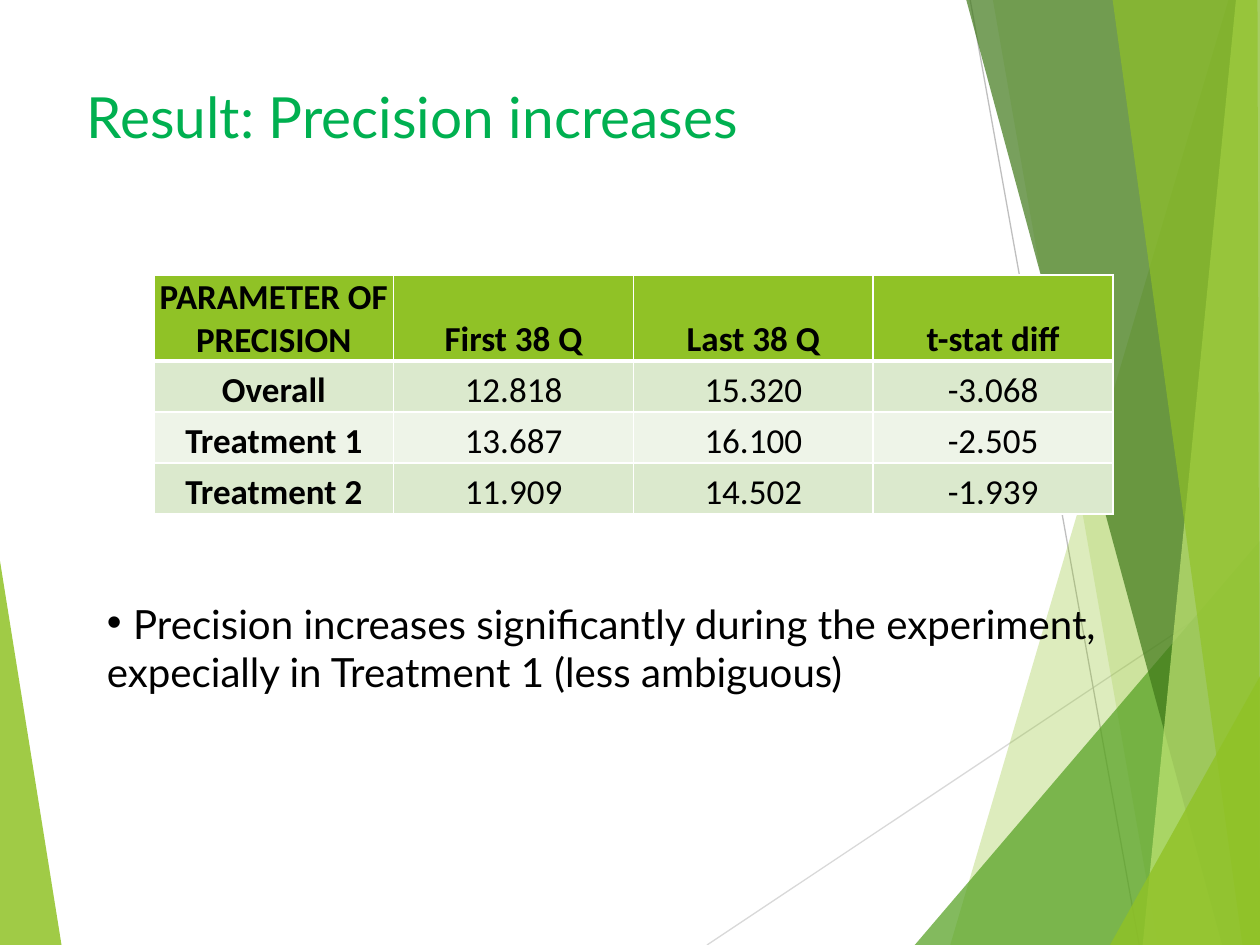
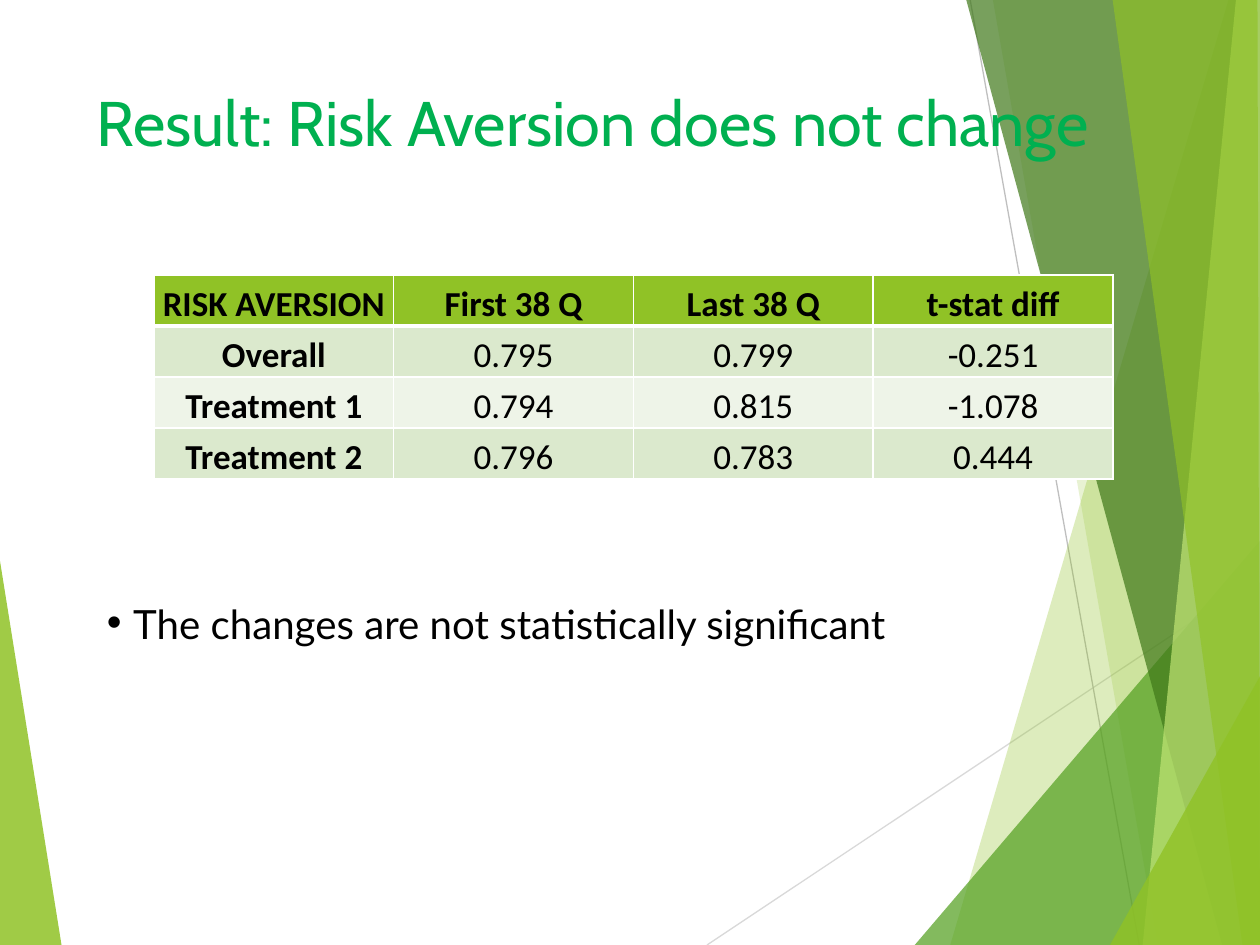
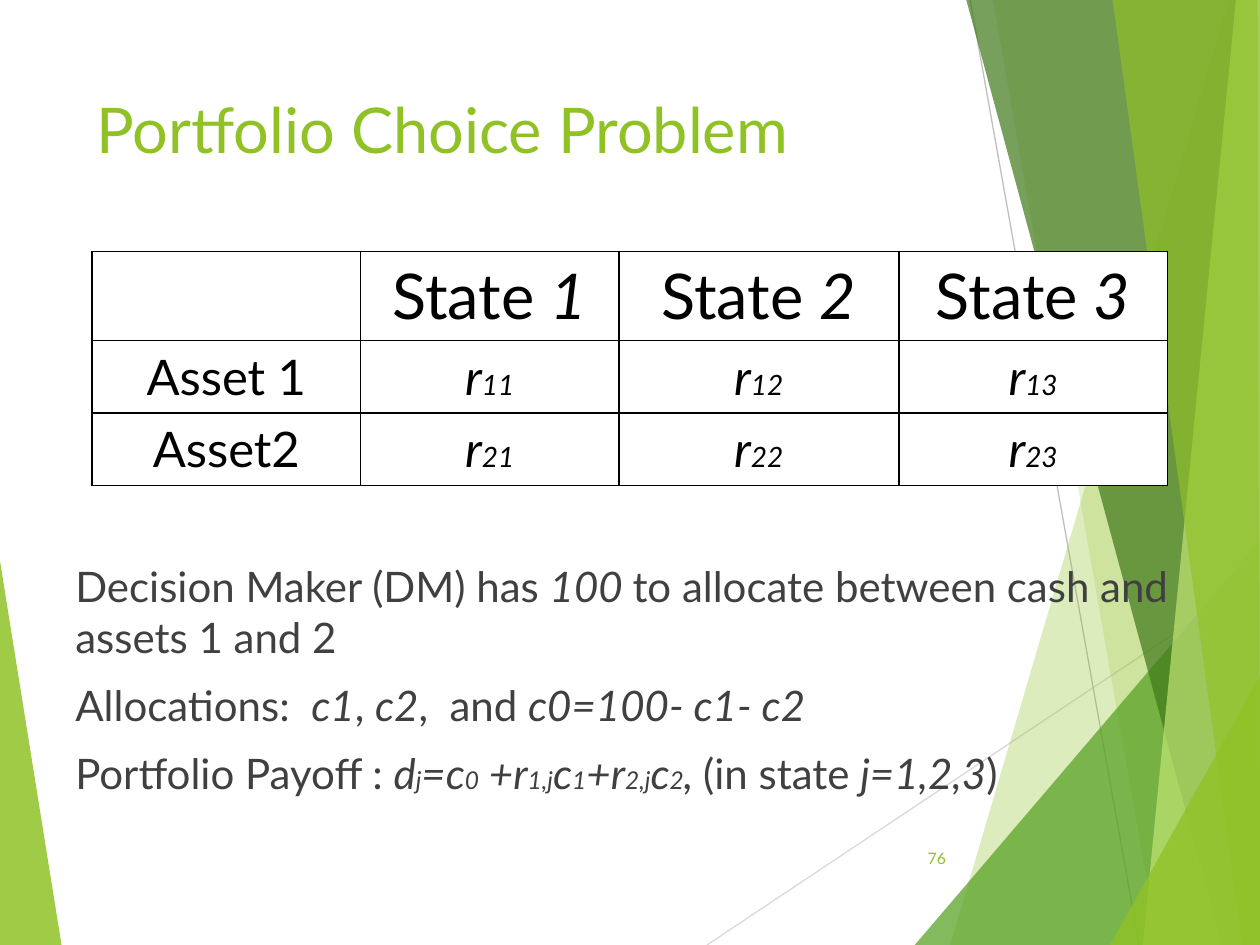
from lxml import etree
from pptx import Presentation
from pptx.dml.color import RGBColor
from pptx.enum import shapes, text
from pptx.oxml import ns
from pptx.util import Pt

# Shared colours and fonts
WHITE = RGBColor(0xFF, 0xFF, 0xFF)
BLACK = RGBColor(0, 0, 0)
BODY = RGBColor(0x40, 0x40, 0x40)
EMERALD = RGBColor(0x00, 0xB0, 0x50)
LIME = RGBColor(0x90, 0xC2, 0x26)
LEAF = RGBColor(0x54, 0xA0, 0x21)
FOREST = RGBColor(0x3F, 0x78, 0x19)
PALE_LIME = RGBColor(0xC0, 0xE4, 0x74)
BAND_DARK = RGBColor(0xDB, 0xE9, 0xCD)
BAND_LIGHT = RGBColor(0xEE, 0xF4, 0xE8)
GREY = RGBColor(0xBF, 0xBF, 0xBF)
LIGHT_GREY = RGBColor(0xD9, 0xD9, 0xD9)
FONT = "Lato"
WIDTH, HEIGHT = 720, 540

# Facets of the backdrop: colour, opacity in percent, corners
LEFT_FACET = (LIME, 85, [(-0.7, 316), (35.3, 540.7), (-0.7, 540)])
RIGHT_FACETS = [
    (LIME, 30, [(702, 0), (543, 540), (721, 540), (721, 0)]),
    (LIME, 20, [(567.4, 0), (661.7, 540), (720.7, 540), (720.7, 0)]),
    (LEAF, 72, [(522.7, 540), (720, 309), (720.7, 540)]),
    (FOREST, 70, [(552.2, 0), (698.4, 540), (720.7, 540), (720.7, 0)]),
    (PALE_LIME, 70, [(706.3, 0), (653, 540), (720.7, 540), (720, 0)]),
    (LIME, 65, [(635.8, 0), (710, 540), (720, 540), (718.6, 0)]),
    (LIME, 80, [(634.3, 540), (720.7, 385.2), (720.7, 540)]),
]
RAYS = [(LIGHT_GREY, (404, 540), (720.7, 329)),
        (GREY, (554.4, 0), (651, 540))]

ITALIC = dict(italic=True)
SUB = dict(italic=True, size=14)


def sub_element(parent, tag, **attrs):
    return etree.SubElement(parent, ns.qn(tag), **attrs)


def add_run(p, content, size=24, font=FONT, color=BLACK, bold=False, italic=False):
    r = p.add_run()
    r.text = content
    f = r.font
    f.size, f.name, f.bold, f.italic = Pt(size), font, bold, italic
    f.color.rgb = color


def add_parts(p, parts, **base):
    """Fill a paragraph from strings and (string, format) pairs."""
    for part in [parts] if isinstance(parts, str) else parts:
        content, extra = (part, {}) if isinstance(part, str) else part
        add_run(p, content, **{**base, **extra})


def add_text(s, box, paragraphs, anchor=text.MSO_ANCHOR.TOP, align=None,
             space=0, bullet=False, **fmt):
    tf = s.shapes.add_textbox(*map(Pt, box)).text_frame
    tf.word_wrap = True
    tf.vertical_anchor = anchor
    for i, parts in enumerate(paragraphs):
        p = tf.paragraphs[0] if i == 0 else tf.add_paragraph()
        p.alignment = align
        p.space_before = Pt(space if i else 0)
        if bullet:
            pPr = p._p.get_or_add_pPr()
            sub_element(pPr, "a:buFont", typeface="Arial")
            sub_element(pPr, "a:buChar", char="•")
        add_parts(p, parts, **fmt)


# Backdrop
def add_facet(s, color, opacity, corners):
    points = [(Pt(x), Pt(y)) for x, y in corners]
    builder = s.shapes.build_freeform(*points[0], scale=1.0)
    builder.add_line_segments(points[1:], close=True)
    sp = builder.convert_to_shape()
    sp.shadow.inherit = False
    sp.line.fill.background()
    sp.fill.solid()
    sp.fill.fore_color.rgb = color
    clr = sp._element.spPr.find(".//" + ns.qn("a:srgbClr"))
    sub_element(clr, "a:alpha", val=str(opacity * 1000))


def add_ray(s, color, start, end):
    line = s.shapes.add_connector(shapes.MSO_CONNECTOR.STRAIGHT,
                                  *map(Pt, start + end))
    line.line.color.rgb = color
    line.line.width = Pt(0.75)
    sub_element(line._element.spPr, "a:effectLst")


def add_slide(prs):
    s = prs.slides.add_slide(prs.slide_layouts[6])
    add_facet(s, *LEFT_FACET)
    for ray in RAYS:
        add_ray(s, *ray)
    for facet in RIGHT_FACETS:
        add_facet(s, *facet)
    return s


# Tables
def style_cell(cell, fill, border, bottom=1):
    tcPr = cell._tc.get_or_add_tcPr()
    for side in "LRTB":
        width = Pt(bottom if side == "B" else 1)
        ln = sub_element(tcPr, "a:ln" + side, w=str(width))
        sub_element(sub_element(ln, "a:solidFill"), "a:srgbClr", val=str(border))
    cell.fill.solid()
    cell.fill.fore_color.rgb = fill


def add_table(s, left, top, widths, heights):
    box = (left, top, sum(widths), sum(heights))
    table = s.shapes.add_table(len(heights), len(widths), *map(Pt, box)).table
    for column, width in zip(table.columns, widths):
        column.width = Pt(width)
    for row, height in zip(table.rows, heights):
        row.height = Pt(height)
    return table


def add_result_table(s, heading, results, header_height):
    rows = [(heading, "First 38 Q", "Last 38 Q", "t-stat diff")] + results
    heights = [header_height] + [29.2] * len(results)
    table = add_table(s, 88, 157, [137] * 4, heights)
    for i, row in enumerate(rows):
        fill = LIME if i == 0 else BAND_DARK if i % 2 else BAND_LIGHT
        for j, value in enumerate(row):
            cell = table.cell(i, j)
            style_cell(cell, fill, WHITE, bottom=1 if i else 3)
            cell.margin_left = cell.margin_right = cell.margin_top = Pt(0.7)
            cell.margin_bottom = 0
            cell.vertical_anchor = text.MSO_ANCHOR.BOTTOM
            p = cell.text_frame.paragraphs[0]
            p.alignment = text.PP_ALIGN.CENTER
            add_run(p, value, size=20, font="Calibri", bold=i == 0 or j == 0)


def add_payoff_table(s):
    rows = [[""] + [["State ", (str(n), ITALIC)] for n in (1, 2, 3)]]
    for n, asset in enumerate(("Asset 1", "Asset2"), 1):
        returns = [[("r", ITALIC), (f"{n}{state}", dict(italic=True, size=16))]
                   for state in (1, 2, 3)]
        rows.append([asset] + returns)
    table = add_table(s, 52.6, 143.6, [153.5, 147.5, 160, 153.5], [51, 41.4, 41.4])
    for i, row in enumerate(rows):
        for j, parts in enumerate(row):
            cell = table.cell(i, j)
            style_cell(cell, WHITE, BLACK)
            p = cell.text_frame.paragraphs[0]
            p.alignment = text.PP_ALIGN.CENTER
            if parts:
                add_parts(p, parts, size=28 if i else 36)


def add_finding(s, finding):
    parts = [(" ", dict(size=24, font="Arial")), finding]
    add_text(s, (54, 337.7, 618, 65), [parts], bullet=True, size=23)


# Slides
def precision_slide(prs):
    s = add_slide(prs)
    add_text(s, (42.5, 43.2, 647, 50), ["Result: Precision increases"],
             size=32.4, color=EMERALD)
    add_result_table(s, "PARAMETER OF PRECISION", [
        ("Overall", "12.818", "15.320", "-3.068"),
        ("Treatment 1", "13.687", "16.100", "-2.505"),
        ("Treatment 2", "11.909", "14.502", "-1.939")], header_height=49.2)
    add_finding(s, "Precision increases significantly during the experiment, "
                   "expecially in Treatment 1 (less ambiguous)")


def risk_aversion_slide(prs):
    s = add_slide(prs)
    add_text(s, (48.2, 44.6, 652, 50), ["Result: Risk Aversion does not change"],
             anchor=text.MSO_ANCHOR.MIDDLE, size=36, font="Cabin", color=EMERALD)
    add_result_table(s, "RISK AVERSION", [
        ("Overall", "0.795", "0.799", "-0.251"),
        ("Treatment 1", "0.794", "0.815", "-1.078"),
        ("Treatment 2", "0.796", "0.783", "0.444")], header_height=29.2)
    add_finding(s, "The changes are not statistically significant")


def portfolio_slide(prs):
    s = add_slide(prs)
    add_text(s, (48.2, 48.2, 500, 104), ["Portfolio Choice Problem"],
             size=36, color=LIME)
    payoff = ["Portfolio Payoff : "]
    for symbol, index in (("d", "j"), ("=c", "0"), (" +r", "1,j"), ("c", "1"),
                          ("+r", "2,j"), ("c", "2")):
        payoff += [(symbol, ITALIC), (index, SUB)]
    payoff += [(", ", ITALIC), "(in state ", ("j=1,2,3", ITALIC), ")"]
    add_text(s, (36, 317, 648, 150), [
        ["Decision Maker (DM) has ", ("100 ", ITALIC),
         "to allocate between cash and assets 1 and 2"],
        ["Allocations:  ", ("c1", ITALIC), ", ", ("c2", ITALIC), ",  and ",
         ("c0=100- c1- c2", ITALIC)],
        payoff], space=10, color=BODY)
    add_text(s, (507.6, 476, 40, 28.8), ["76"], anchor=text.MSO_ANCHOR.MIDDLE,
             align=text.PP_ALIGN.RIGHT, size=9, color=LIME)
    add_payoff_table(s)


def main():
    prs = Presentation()
    prs.slide_width, prs.slide_height = Pt(WIDTH), Pt(HEIGHT)
    precision_slide(prs)
    risk_aversion_slide(prs)
    portfolio_slide(prs)
    prs.save("out.pptx")


if __name__ == "__main__":
    main()
